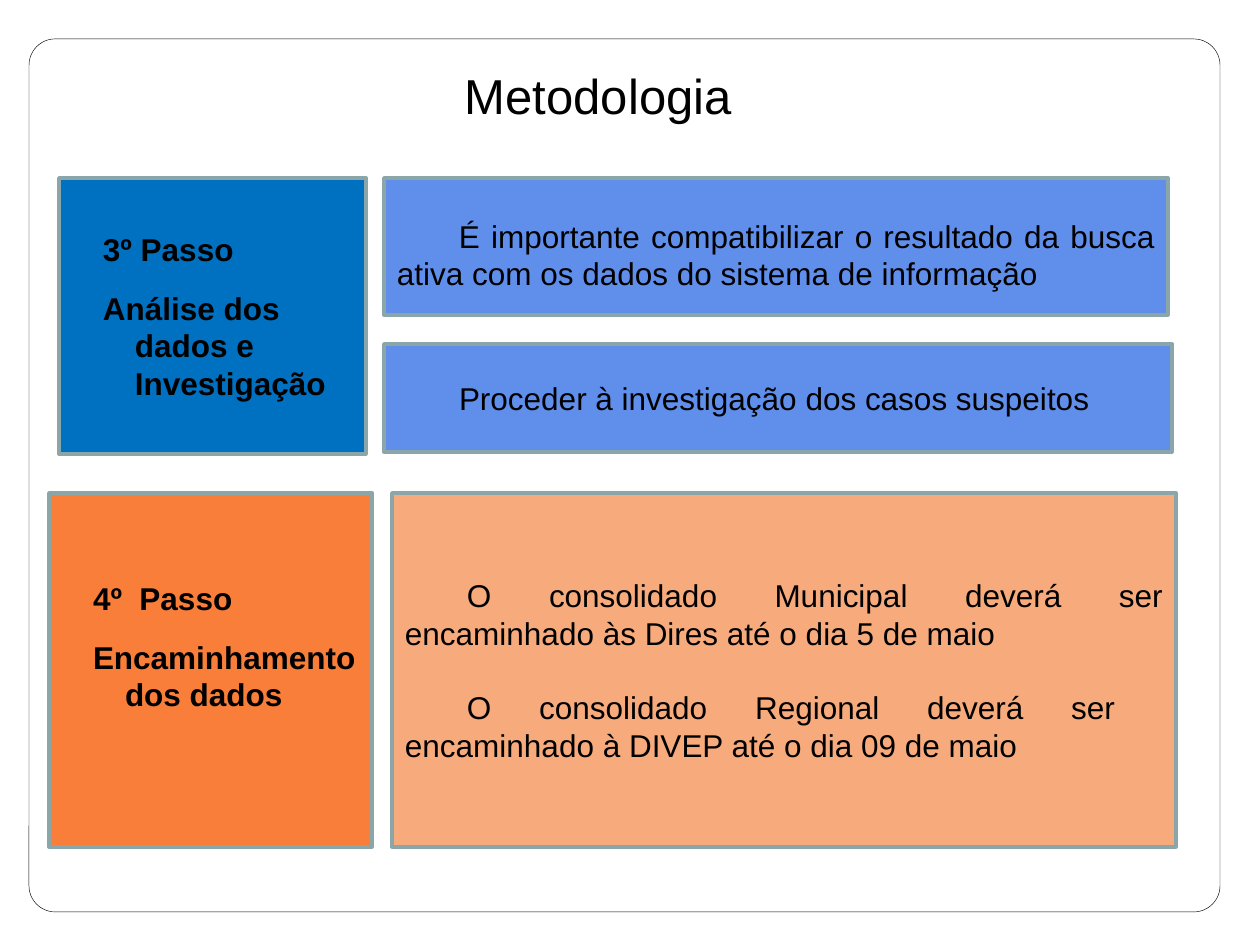
from pptx import Presentation
from pptx.dml.color import RGBColor
from pptx.enum.shapes import MSO_SHAPE as Shape
from pptx.enum.text import MSO_ANCHOR as Anchor, PP_ALIGN as Align
from pptx.util import Emu, Pt

PX = 914400 // 126
INSET_X, INSET_Y = 13, 6
BLACK, BORDER = "000000", "8AA6A8"


def px(length):
    return Emu(length * PX)


def color(hex_code):
    return RGBColor.from_string(hex_code)


def add_panel(page, box, fill, line=BORDER, width=2, kind=Shape.RECTANGLE):
    panel = page.shapes.add_shape(kind, *map(px, box))
    panel.shadow.inherit = False
    if fill:
        panel.fill.solid()
        panel.fill.fore_color.rgb = color(fill)
    else:
        panel.fill.background()
    panel.line.color.rgb = color(line)
    panel.line.width = Pt(width)
    return panel


def write(shape, texts, align, size=18, bold=False, gap=0, margin=0, indent=0,
          extra_top=0, extra_bottom=0):
    frame = shape.text_frame
    frame.word_wrap = True
    frame.vertical_anchor = Anchor.MIDDLE
    frame.margin_left = frame.margin_right = px(INSET_X)
    frame.margin_top = px(INSET_Y + extra_top)
    frame.margin_bottom = px(INSET_Y + extra_bottom)
    for index, text in enumerate(texts):
        para = frame.paragraphs[0] if index == 0 else frame.add_paragraph()
        para.alignment = align
        if index:
            para.space_before = Pt(gap)
        if margin or indent:
            properties = para._p.get_or_add_pPr()
            properties.set("marL", str(px(margin)))
            properties.set("indent", str(px(indent)))
        span = para.add_run()
        span.text = text
        span.font.name = "Arial"
        span.font.size = Pt(size)
        span.font.bold = bold
        span.font.color.rgb = color(BLACK)


def add_frame(page, box):
    frame = add_panel(page, box, None, BLACK, 0.25, Shape.ROUNDED_RECTANGLE)
    frame.adjustments[0] = 0.03


def add_title(page, box, text):
    title = page.shapes.add_textbox(*map(px, box))
    write(title, [text], Align.CENTER, size=28)


def add_step(page, box, fill, texts, extra_bottom=0):
    step = add_panel(page, box, fill)
    write(step, texts, Align.LEFT, bold=True, gap=12, margin=63, indent=-32,
          extra_bottom=extra_bottom)


def add_detail(page, box, fill, texts, extra_top=0):
    detail = add_panel(page, box, fill)
    write(detail, texts, Align.JUSTIFY, gap=21, indent=62, extra_top=extra_top)


def main():
    deck = Presentation()
    deck.slide_width, deck.slide_height = px(1260), px(945)
    page = deck.slides.add_slide(deck.slide_layouts[6])

    add_frame(page, (29, 39, 1191, 873))

    # Third step: analysis and investigation
    add_step(page, (59, 178, 307, 276), "0070C0",
             ["3º Passo", "Análise dos dados e Investigação"])
    add_detail(page, (384, 178, 784, 137), "5F8EEB",
               ["É importante compatibilizar o resultado da busca ativa "
                "com os dados do sistema de informação"], extra_top=16)
    add_detail(page, (384, 344, 788, 108), "5F8EEB",
               ["Proceder à investigação dos casos suspeitos"])

    # Fourth step: forwarding the data
    add_step(page, (49, 493, 323, 354), "F87E3A",
             ["4º  Passo", "Encaminhamento dos dados"], extra_bottom=48)
    add_detail(page, (392, 493, 784, 354), "F7AB7D",
               ["O consolidado Municipal deverá ser encaminhado "
                "às Dires até o dia 5 de maio",
                "O consolidado Regional deverá ser  encaminhado "
                "à DIVEP até o dia 09 de maio"])

    add_title(page, (98, 59, 1014, 72), "Metodologia ")
    deck.save("out.pptx")


if __name__ == "__main__":
    main()
